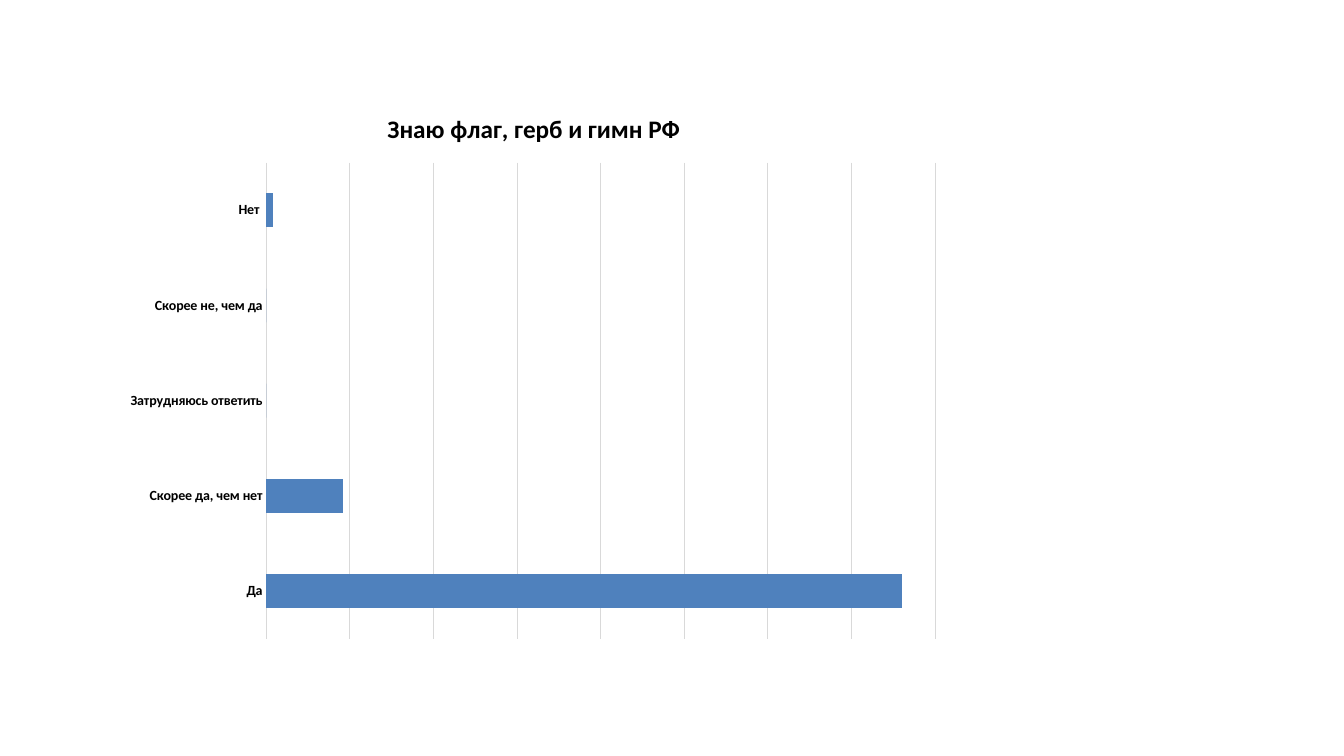
from lxml import etree
from pptx import Presentation
from pptx.chart.data import CategoryChartData
from pptx.dml.color import RGBColor
from pptx.enum.chart import XL_CHART_TYPE as ChartType, XL_TICK_MARK as Tick
from pptx.oxml.ns import qn
from pptx.util import Inches, Pt

FONT = "Calibri"
BLACK, GRID, BLUE = "000000", "D9D9D9", "4F81BD"
ANSWERS = {
    "Да": 100,
    "Скорее да, чем нет": 12,
    "Затрудняюсь ответить": 0,
    "Скорее не, чем да": 0,
    "Нет ": 1,
}
# Eight equal grid steps; the longest bar ends inside the last one
AXIS = {"minimum_scale": 0, "maximum_scale": 105.2, "major_unit": 13.15,
        "has_major_gridlines": True, "visible": False}
PLOT_AREA = {"x": 0.18, "y": 0.13, "w": 0.8, "h": 0.85}


def rgb(color):
    return RGBColor.from_string(color)


def set_font(font, size, bold):
    for name, value in {"name": FONT, "size": Pt(size), "bold": bold}.items():
        setattr(font, name, value)
    font.color.rgb = rgb(BLACK)


def set_line(line, color):
    line.color.rgb = rgb(color)
    line.width = Pt(0.75)


def place_plot_area(chart, fractions):
    """Fix the inner plot area as fractions of the chart frame."""
    area = chart.plots[0]._element.getparent()
    layout = area.find(qn("c:layout"))
    if layout is None:
        layout = etree.Element(qn("c:layout"))
        area.insert(0, layout)
    manual = etree.SubElement(layout, qn("c:manualLayout"))
    settings = {"layoutTarget": "inner", "xMode": "edge", "yMode": "edge", **fractions}
    for tag, value in settings.items():
        etree.SubElement(manual, qn(f"c:{tag}")).set("val", str(value))


def add_bar_chart(s, title, answers):
    data = CategoryChartData()
    data.categories = list(answers)
    data.add_series("Series 1", list(answers.values()))
    chart = s.shapes.add_chart(ChartType.BAR_CLUSTERED, Inches(1.15), Inches(0.89),
                               Inches(8.29), Inches(5.56), data).chart
    set_font(chart.font, 10, False)
    chart.has_legend = False

    chart.has_title = True
    tf = chart.chart_title.text_frame
    tf.text = title
    set_font(tf.paragraphs[0].runs[0].font, 18, True)
    chart.chart_title.include_in_layout = False

    plot = chart.plots[0]
    plot.gap_width = 182
    plot.vary_by_categories = False
    fill = plot.series[0].format.fill
    fill.solid()
    fill.fore_color.rgb = rgb(BLUE)

    cat_axis = chart.category_axis
    cat_axis.major_tick_mark = cat_axis.minor_tick_mark = Tick.NONE
    set_font(cat_axis.tick_labels.font, 10, True)
    set_line(cat_axis.format.line, GRID)

    val_axis = chart.value_axis
    for name, value in AXIS.items():
        setattr(val_axis, name, value)
    set_line(val_axis.major_gridlines.format.line, GRID)
    place_plot_area(chart, PLOT_AREA)


def main():
    prs = Presentation()
    prs.slide_width, prs.slide_height = Inches(13.33), Inches(7.5)
    s = prs.slides.add_slide(prs.slide_layouts[6])
    add_bar_chart(s, "Знаю флаг, герб и гимн РФ", ANSWERS)
    prs.save("out.pptx")


if __name__ == "__main__":
    main()
